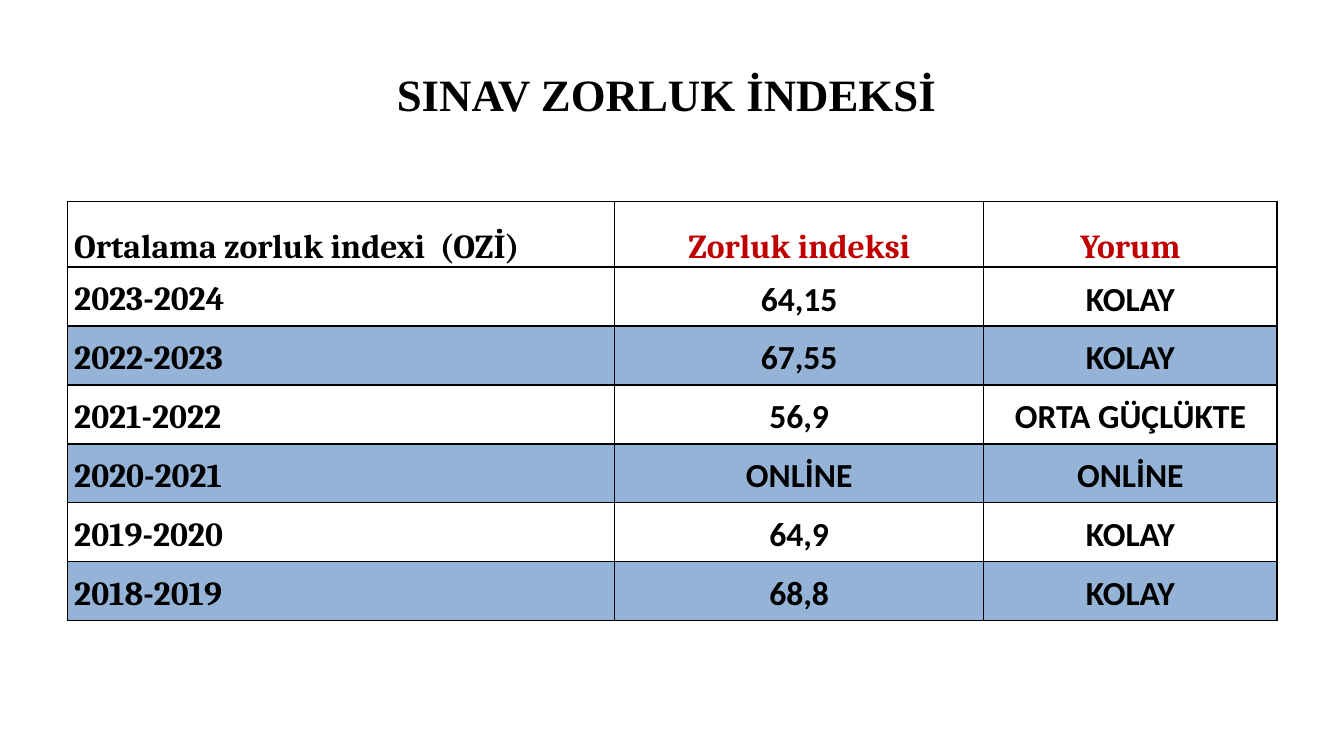
from dataclasses import dataclass

from lxml.etree import SubElement
from pptx import Presentation
from pptx.dml.color import RGBColor
from pptx.enum.text import MSO_ANCHOR, PP_ALIGN
from pptx.oxml.ns import qn
from pptx.slide import Slide
from pptx.table import Table, _Cell
from pptx.text.text import TextFrame
from pptx.util import Inches, Pt

SLIDE_WIDTH, SLIDE_HEIGHT = 13.33, 7.5
TABLE_LEFT, TABLE_TOP = 0.05 * SLIDE_WIDTH, 2.0
COLUMN_WIDTHS = (5.43, 3.66, 2.91)
TABLE_WIDTH = sum(COLUMN_WIDTHS)
TABLE_HEIGHT, HEADER_HEIGHT = 4.16, 0.65

BLACK, RED, WHITE, BLUE = "000000", "C00000", "FFFFFF", "95B3D7"
THIN, THICK = 1, 2.25


@dataclass(frozen=True)
class TextStyle:
    font: str
    size: float
    color: str = BLACK
    align: PP_ALIGN = PP_ALIGN.CENTER
    line_spacing: float = 1.15


@dataclass(frozen=True)
class YearResult:
    year: str
    difficulty: str
    comment: str


TITLE_STYLE = TextStyle("Times New Roman", 32, line_spacing=1.0)
LABEL_STYLE = TextStyle("Cambria", 24, align=PP_ALIGN.LEFT)
HEADER_STYLE = TextStyle("Cambria", 24, RED)
VALUE_STYLE = TextStyle("Calibri", 24)

HEADERS = ("Ortalama zorluk indexi  (OZİ)", "Zorluk indeksi", "Yorum")
RESULTS = (
    YearResult("2023-2024", "64,15", "KOLAY"),
    YearResult("2022-2023", "67,55", "KOLAY"),
    YearResult("2021-2022", "56,9", "ORTA GÜÇLÜKTE"),
    YearResult("2020-2021", "ONLİNE", "ONLİNE"),
    YearResult("2019-2020", "64,9", "KOLAY"),
    YearResult("2018-2019", "68,8", "KOLAY"),
)


def rgb(color: str) -> RGBColor:
    return RGBColor.from_string(color)


def write_text(frame: TextFrame, text: str, style: TextStyle) -> None:
    frame.word_wrap = True
    paragraph = frame.paragraphs[0]
    paragraph.alignment = style.align
    paragraph.line_spacing = style.line_spacing
    run = paragraph.add_run()
    run.text = text
    run.font.name = style.font
    run.font.size = Pt(style.size)
    run.font.bold = True
    run.font.color.rgb = rgb(style.color)


def draw_borders(cell: _Cell, top: float, bottom: float) -> None:
    properties = cell._tc.get_or_add_tcPr()
    sides = {"a:lnL": THIN, "a:lnR": THIN, "a:lnT": top, "a:lnB": bottom}
    for side, width in sides.items():
        line = SubElement(properties, qn(side), w=str(Pt(width)))
        fill = SubElement(line, qn("a:solidFill"))
        SubElement(fill, qn("a:srgbClr"), val=BLACK)


def draw_row(table: Table, row: int, texts: tuple[str, ...]) -> None:
    is_header = row == 0
    for column, text in enumerate(texts):
        cell = table.cell(row, column)
        cell.margin_left = cell.margin_right = Inches(0.07)
        cell.margin_top = cell.margin_bottom = 0
        cell.vertical_anchor = MSO_ANCHOR.BOTTOM if is_header else MSO_ANCHOR.MIDDLE
        draw_borders(cell, THICK if row == 1 else THIN, THICK if is_header else THIN)
        cell.fill.solid()
        cell.fill.fore_color.rgb = rgb(BLUE if row and row % 2 == 0 else WHITE)
        if column == 0:
            style = LABEL_STYLE
        else:
            style = HEADER_STYLE if is_header else VALUE_STYLE
        write_text(cell.text_frame, text, style)


def draw_title(slide: Slide) -> None:
    shape = slide.shapes.add_textbox(
        Inches(TABLE_LEFT), Inches(0.04 * SLIDE_HEIGHT), Inches(TABLE_WIDTH), Inches(1.25)
    )
    shape.text_frame.vertical_anchor = MSO_ANCHOR.MIDDLE
    write_text(shape.text_frame, "SINAV ZORLUK İNDEKSİ ", TITLE_STYLE)


def draw_table(slide: Slide) -> None:
    table = slide.shapes.add_table(
        len(RESULTS) + 1, len(HEADERS), Inches(TABLE_LEFT), Inches(TABLE_TOP),
        Inches(TABLE_WIDTH), Inches(TABLE_HEIGHT),
    ).table
    for column, width in zip(table.columns, COLUMN_WIDTHS):
        column.width = Inches(width)
    for row in table.rows:
        row.height = Inches((TABLE_HEIGHT - HEADER_HEIGHT) / len(RESULTS))
    table.rows[0].height = Inches(HEADER_HEIGHT)

    draw_row(table, 0, HEADERS)
    for row, result in enumerate(RESULTS, start=1):
        draw_row(table, row, (result.year, result.difficulty, result.comment))


def main() -> None:
    presentation = Presentation()
    presentation.slide_width = Inches(SLIDE_WIDTH)
    presentation.slide_height = Inches(SLIDE_HEIGHT)
    slide = presentation.slides.add_slide(presentation.slide_layouts[6])

    # Heading
    draw_title(slide)
    # Difficulty index by academic year
    draw_table(slide)

    presentation.save("out.pptx")


if __name__ == "__main__":
    main()
